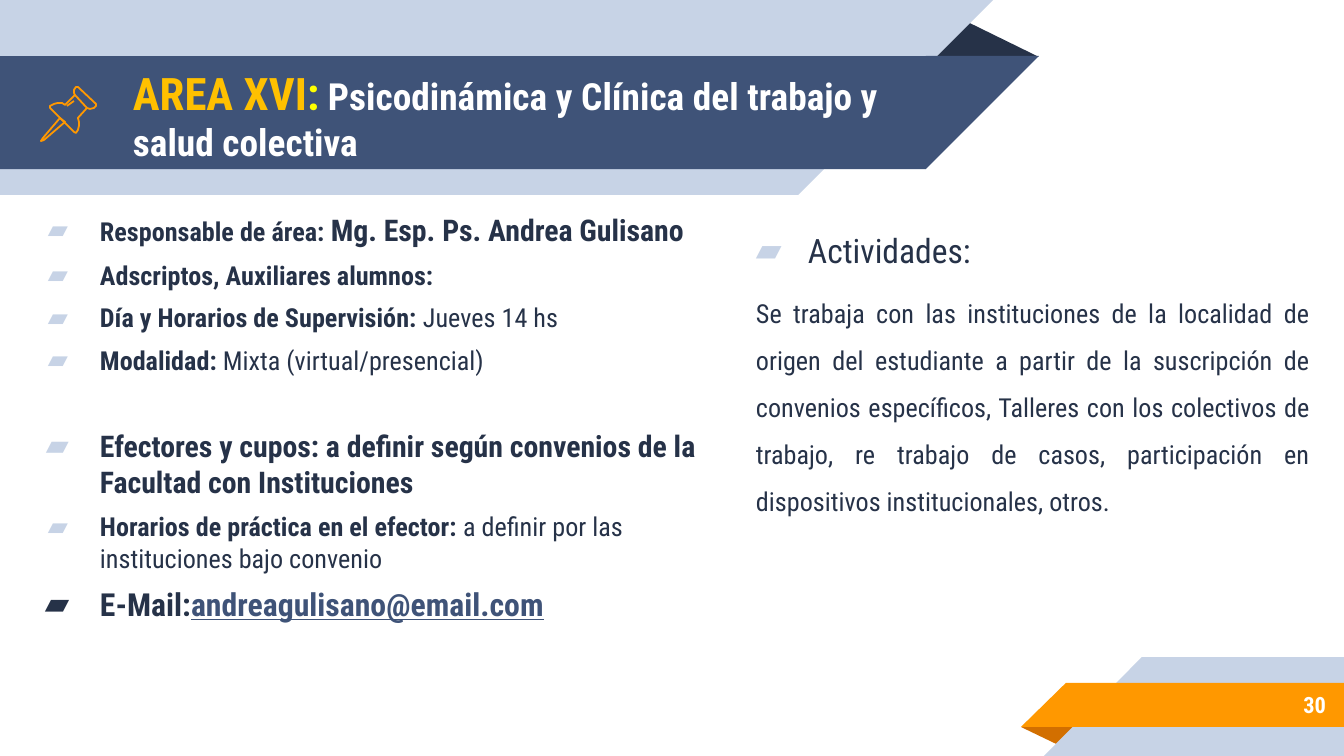
"""Build the slide that presents Area XVI, its staff, its hours and its work."""
import dataclasses
import typing

import lxml.etree
import pptx
import pptx.dml.color
import pptx.enum.shapes
import pptx.enum.text
import pptx.oxml.ns
import pptx.util

WIDTH, HEIGHT = 1344, 756
SCALE = 9144000 / WIDTH
INSET = 13
FONT = "Roboto Condensed"
MARK = "▰"

NAVY = pptx.dml.color.RGBColor(0x26, 0x32, 0x48)
BLUE = pptx.dml.color.RGBColor(0x3F, 0x53, 0x78)
PALE = pptx.dml.color.RGBColor(0xC7, 0xD3, 0xE6)
ORANGE = pptx.dml.color.RGBColor(0xFF, 0x98, 0x00)
RUST = pptx.dml.color.RGBColor(0xD2, 0x6F, 0x00)
GOLD = pptx.dml.color.RGBColor(0xFF, 0xC0, 0x00)
YELLOW = pptx.dml.color.RGBColor(0xFF, 0xFF, 0x00)
WHITE = pptx.dml.color.RGBColor(0xFF, 0xFF, 0xFF)

Color = pptx.dml.color.RGBColor
Shape = pptx.enum.shapes.MSO_SHAPE
Align = pptx.enum.text.PP_ALIGN
Anchor = pptx.enum.text.MSO_ANCHOR
Box = tuple[int, int, int, int]
Point = tuple[int, int]


@dataclasses.dataclass(frozen=True)
class Piece:
    kind: int
    box: Box
    fill: Color
    flip: bool = False
    turn: int = 0


@dataclasses.dataclass(frozen=True)
class Run:
    text: str
    size: int = 14
    color: Color = NAVY
    bold: bool = False
    under: bool = False


@dataclasses.dataclass(frozen=True)
class Para:
    runs: list[Run]
    mark: typing.Optional[Color] = None
    left: int = 0
    hang: int = 0
    before: int = 0
    lines: float = 1.0
    align: int = Align.LEFT


@dataclasses.dataclass(frozen=True)
class Stroke:
    points: list[Point]
    close: bool = False


PIECES = [
    Piece(Shape.ISOSCELES_TRIANGLE, (925, 19, 114, 38), NAVY),
    Piece(Shape.RECTANGLE, (0, 0, 798, 195), PALE, True, 180),
    Piece(Shape.RIGHT_TRIANGLE, (798, 0, 195, 195), PALE, True, 180),
    Piece(Shape.RECTANGLE, (0, 56, 926, 113), BLUE, True, 180),
    Piece(Shape.RIGHT_TRIANGLE, (926, 56, 113, 113), BLUE, True, 180),
    Piece(Shape.ISOSCELES_TRIANGLE, (1021, 727, 58, 19), RUST, False, 180),
    Piece(Shape.RECTANGLE, (1142, 657, 202, 99), PALE, True),
    Piece(Shape.RIGHT_TRIANGLE, (1044, 657, 98, 99), PALE, True),
    Piece(Shape.RECTANGLE, (1066, 683, 278, 44), ORANGE, True),
    Piece(Shape.RIGHT_TRIANGLE, (1021, 683, 45, 44), ORANGE, True),
]

PIN = [
    Stroke([(60, 118), (43, 138), (41, 141), (44, 140), (65, 122)], True),
    Stroke([(75, 95), (87, 108), (90, 109), (94, 108), (96, 106), (96, 104),
            (78, 87), (76, 87), (74, 90), (74, 93)], True),
    Stroke([(75, 95), (65, 105), (62, 103), (58, 103), (54, 104), (50, 106),
            (50, 108), (74, 132), (76, 133), (78, 130), (79, 126), (79, 122),
            (78, 118), (87, 108)]),
    Stroke([(67, 106), (74, 101)]),
]


def item(*runs: Run, mark: Color = PALE, hang: int = 52, before: int = 6,
         align: int = Align.LEFT) -> Para:
    return Para(list(runs), mark, 67, hang, before, align=align)


STAFF = [
    item(Run("Responsable de área: ", bold=True),
         Run("Mg. Esp. Ps. Andrea Gulisano", 16, bold=True), before=0),
    item(Run("Adscriptos, Auxiliares alumnos:", bold=True)),
    item(Run("Día y Horarios de Supervisión:", bold=True), Run(" Jueves 14 hs")),
    item(Run("Modalidad:", bold=True), Run(" Mixta (virtual/presencial)")),
    item(Run("Efectores y cupos: a definir según convenios de la Facultad "
             "con Instituciones", 16, bold=True), hang=54, before=28),
    item(Run("Horarios de práctica en el efector:", bold=True),
         Run(" a definir por las instituciones bajo convenio")),
    item(Run("E-Mail:", 17, bold=True),
         Run("andreagulisano@email.com", 17, BLUE, True, True),
         mark=NAVY, hang=55),
]

TASKS = [
    item(Run("Actividades:", 18), before=0, align=Align.JUSTIFY),
    Para([Run("Se trabaja con las instituciones de la localidad de origen del "
              "estudiante a partir de la suscripción de convenios específicos, "
              "Talleres con los colectivos de trabajo, re trabajo de casos, "
              "participación en dispositivos institucionales, otros.")],
         left=15, before=6, lines=1.5, align=Align.JUSTIFY),
]

TITLE = [Para([
    Run("AREA XVI", 24, GOLD, True),
    Run(":", 24, YELLOW, True),
    Run(" Psicodinámica y Clínica del trabajo y salud colectiva", 20, WHITE, True),
])]

NUMBER = [Para([Run("30", 12, WHITE, True)], align=Align.RIGHT)]


def px(length: int) -> int:
    return round(length * SCALE)


def draw_piece(shapes: typing.Any, piece: Piece) -> None:
    shape = shapes.add_shape(piece.kind, *map(px, piece.box))
    shape.shadow.inherit = False
    shape.fill.solid()
    shape.fill.fore_color.rgb = piece.fill
    shape.line.fill.background()
    shape.rotation = piece.turn
    if piece.flip:
        shape._element.spPr.xfrm.set("flipH", "1")
    if piece.kind == Shape.ISOSCELES_TRIANGLE:
        shape.adjustments[0] = 0.32


def draw_stroke(shapes: typing.Any, stroke: Stroke) -> None:
    start, *rest = stroke.points
    pen = shapes.build_freeform(*start, scale=SCALE)
    pen.add_line_segments(rest, close=stroke.close)
    shape = pen.convert_to_shape()
    shape.shadow.inherit = False
    shape.fill.background()
    shape.line.color.rgb = ORANGE
    shape.line.width = pptx.util.Pt(0.96)


def write(para: typing.Any, text: str, *, size: int, color: Color,
          bold: bool, under: bool) -> None:
    run = para.add_run()
    run.text = text
    font = run.font
    font.name, font.size = FONT, pptx.util.Pt(size)
    font.bold, font.underline = bold, under
    font.color.rgb = color


def set_mark(props: typing.Any, color: Color) -> None:
    qn, add = pptx.oxml.ns.qn, lxml.etree.SubElement
    add(add(props, qn("a:buClr")), qn("a:srgbClr")).set("val", str(color))
    add(props, qn("a:buFont")).set("typeface", FONT)
    add(props, qn("a:buChar")).set("char", MARK)


def draw_text(shapes: typing.Any, box: Box, paras: list[Para],
              anchor: int = Anchor.TOP, top: int = INSET) -> None:
    frame = shapes.add_textbox(*map(px, box)).text_frame
    frame.word_wrap = True
    frame.vertical_anchor = anchor
    frame.margin_left = frame.margin_right = frame.margin_bottom = px(INSET)
    frame.margin_top = px(top)
    for place, para in enumerate(paras):
        line = frame.add_paragraph() if place else frame.paragraphs[0]
        line.alignment = para.align
        line.line_spacing = para.lines
        line.space_before = pptx.util.Pt(para.before)
        props = line._p.get_or_add_pPr()
        props.set("marL", str(px(para.left)))
        props.set("indent", str(-px(para.hang)))
        if para.mark is not None:
            set_mark(props, para.mark)
        for run in para.runs:
            write(line, run.text, size=run.size, color=run.color,
                  bold=run.bold, under=run.under)


def main() -> None:
    deck = pptx.Presentation()
    deck.slide_width, deck.slide_height = px(WIDTH), px(HEIGHT)
    shapes = deck.slides.add_slide(deck.slide_layouts[6]).shapes
    for piece in PIECES:
        draw_piece(shapes, piece)
    draw_text(shapes, (20, 199, 692, 557), STAFF)
    draw_text(shapes, (728, 171, 595, 480), TASKS, top=59)
    draw_text(shapes, (1120, 681, 219, 47), NUMBER, Anchor.MIDDLE)
    draw_text(shapes, (120, 58, 830, 113), TITLE, Anchor.MIDDLE)
    for stroke in PIN:
        draw_stroke(shapes, stroke)
    deck.save("out.pptx")


if __name__ == "__main__":
    main()
